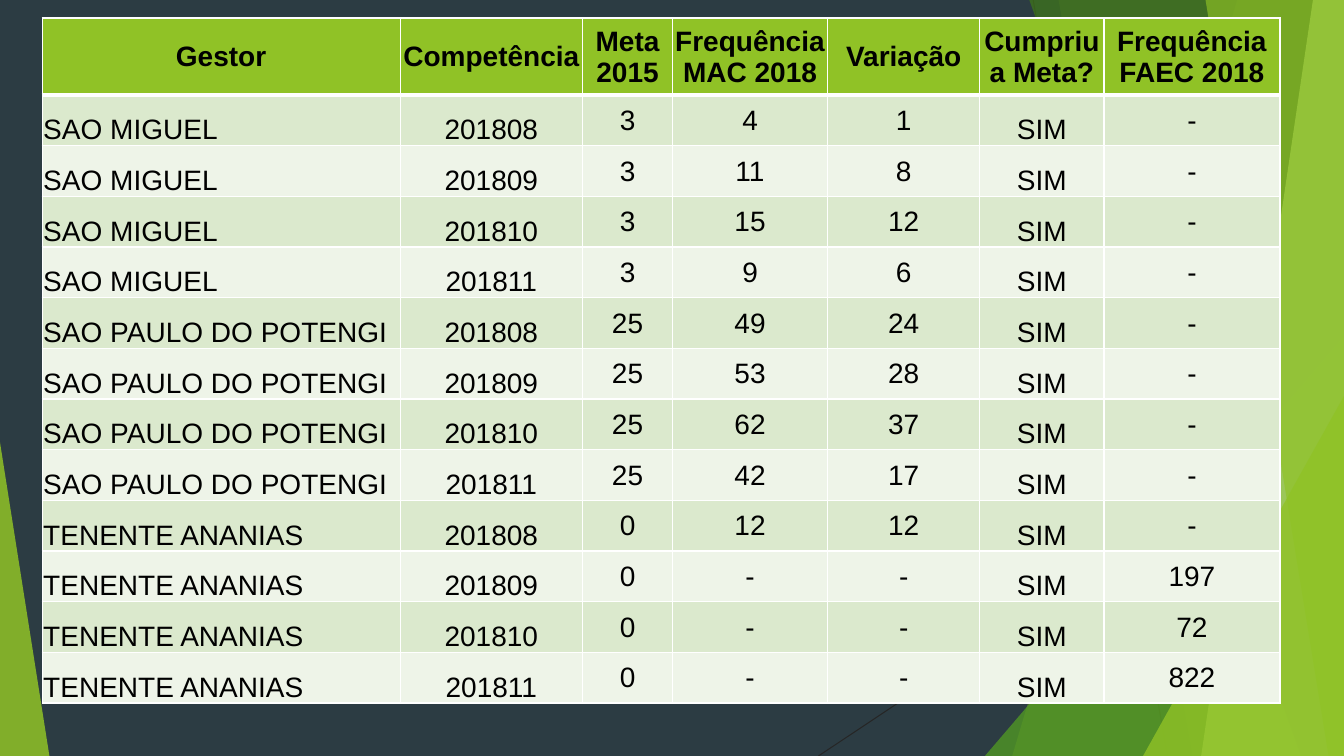
from lxml.etree import SubElement
from pptx import Presentation
from pptx.dml.color import RGBColor
from pptx.enum.shapes import MSO_CONNECTOR, MSO_SHAPE
from pptx.enum.text import MSO_ANCHOR as ANCHOR, PP_ALIGN as ALIGN
from pptx.oxml import parse_xml
from pptx.oxml.ns import nsdecls, qn
from pptx.util import Pt

NIGHT = RGBColor(0x2C, 0x3C, 0x43)
CHARCOAL = RGBColor(0x26, 0x26, 0x26)
LIME = RGBColor(0x90, 0xC2, 0x26)
GREEN = RGBColor(0x54, 0xA0, 0x21)
FOREST = RGBColor(0x3F, 0x78, 0x19)
PALE_LIME = RGBColor(0xC0, 0xE4, 0x74)
ROW_DARK = RGBColor(0xDB, 0xE9, 0xCD)
ROW_LIGHT = RGBColor(0xEE, 0xF4, 0xE8)
WHITE = RGBColor(0xFF, 0xFF, 0xFF)
BLACK = RGBColor(0, 0, 0)

WIDTH, HEIGHT = 960, 540


def paint(shape, color, opacity):
    shape.shadow.inherit = False
    shape.line.fill.background()
    shape.fill.solid()
    shape.fill.fore_color.rgb = color
    tint = shape.element.spPr.find(qn("a:solidFill"))[0]
    SubElement(tint, qn("a:alpha"), val=str(opacity * 1000))


def set_borders(cell, widths):
    properties = cell._tc.get_or_add_tcPr()
    for place, (side, width) in enumerate(widths.items()):
        properties.insert(place, parse_xml(
            f'<a:ln{side} {nsdecls("a")} w="{Pt(width)}"><a:solidFill>'
            f'<a:srgbClr val="{WHITE}"/></a:solidFill></a:ln{side}>'))


prs = Presentation()
prs.slide_width, prs.slide_height = Pt(WIDTH), Pt(HEIGHT)
slide = prs.slides.add_slide(prs.slide_layouts[6])
slide.background.fill.solid()
slide.background.fill.fore_color.rgb = NIGHT

for ends in [(738, 0, 834, HEIGHT), (WIDTH, 290, 584.6, HEIGHT)]:
    ray = slide.shapes.add_connector(MSO_CONNECTOR.STRAIGHT, *map(Pt, ends))
    ray.line.color.rgb = CHARCOAL
    ray.line.width = Pt(0.75)
    SubElement(ray.element.spPr, qn("a:effectLst"))

facets = [
    ("band", (884, 723), LIME, 30),
    ("band", (756, 852), LIME, 20),
    ("triangle", (703.5, 240, 256.5, 300, 1), GREEN, 72),
    ("band", (735, 929.5), FOREST, 70),
    ("band", (938, 858), PALE_LIME, 70),
    ("band", (861, 949), LIME, 65),
    ("triangle", (816.5, 283, 143.5, 257, 1), LIME, 80),
    ("triangle", (0, 316, 35.3, 224, 0), LIME, 85),
]
for kind, geometry, color, opacity in facets:
    if kind == "band":
        top_x, bottom_x = geometry
        outline = slide.shapes.build_freeform(Pt(top_x), Pt(-0.7), scale=1.0)
        corners = [(WIDTH, -0.7), (WIDTH, HEIGHT), (bottom_x, HEIGHT)]
        outline.add_line_segments([(Pt(x), Pt(y)) for x, y in corners])
        facet = outline.convert_to_shape()
    else:
        *box, apex = geometry
        facet = slide.shapes.add_shape(
            MSO_SHAPE.ISOSCELES_TRIANGLE, *map(Pt, box))
        facet.adjustments[0] = apex
    paint(facet, color, opacity)

headings = ["Gestor", "Competência", "Meta\n2015", "Frequência MAC 2018",
            "Variação", "Cumpriu a Meta?", "Frequência FAEC 2018"]
results = {
    "SAO MIGUEL": (3, [(4, 1, "-"), (11, 8, "-"), (15, 12, "-"), (9, 6, "-")]),
    "SAO PAULO DO POTENGI": (
        25, [(49, 24, "-"), (53, 28, "-"), (62, 37, "-"), (42, 17, "-")]),
    "TENENTE ANANIAS": (
        0, [(12, 12, "-"), ("-", "-", 197), ("-", "-", 72), ("-", "-", 822)]),
}
rows = [headings]
for gestor, (meta, months) in results.items():
    for month, (mac, variation, faec) in enumerate(months, 201808):
        rows.append([gestor, month, meta, mac, variation, "SIM", faec])

column_widths = [255.6, 130.4, 64.2, 110.8, 108.8, 88.6, 125.8]
row_heights = [54.9] + [36.2] * (len(rows) - 1)
goals = slide.shapes.add_table(
    len(rows), len(headings), Pt(30.2), Pt(12.9),
    Pt(sum(column_widths)), Pt(sum(row_heights))).table
for column, width in zip(goals.columns, column_widths):
    column.width = Pt(width)
for row, height in zip(goals.rows, row_heights):
    row.height = Pt(height)

margins = {"margin_left": Pt(0.7), "margin_right": Pt(0.7),
           "margin_top": Pt(0.7), "margin_bottom": 0}
bottom_columns = ["Gestor", "Competência", "Cumpriu a Meta?"]

for r, values in enumerate(rows):
    header = r == 0
    text_format = {"name": "Arial", "size": Pt(20), "bold": header}
    for c, value in enumerate(values):
        cell = goals.cell(r, c)
        cell.text = str(value)
        for name, setting in margins.items():
            setattr(cell, name, setting)
        sunk = not header and headings[c] in bottom_columns
        cell.vertical_anchor = ANCHOR.BOTTOM if sunk else ANCHOR.MIDDLE
        for paragraph in cell.text_frame.paragraphs:
            paragraph.alignment = ALIGN.CENTER if header or c else ALIGN.LEFT
            for run in paragraph.runs:
                for name, setting in text_format.items():
                    setattr(run.font, name, setting)
                run.font.color.rgb = BLACK
        cell.fill.solid()
        cell.fill.fore_color.rgb = (
            LIME if header else ROW_DARK if r % 2 else ROW_LIGHT)
        set_borders(cell, {"L": 1, "R": 1, "T": 3 if r == 1 else 1,
                           "B": 3 if header else 1})

prs.save("out.pptx")
